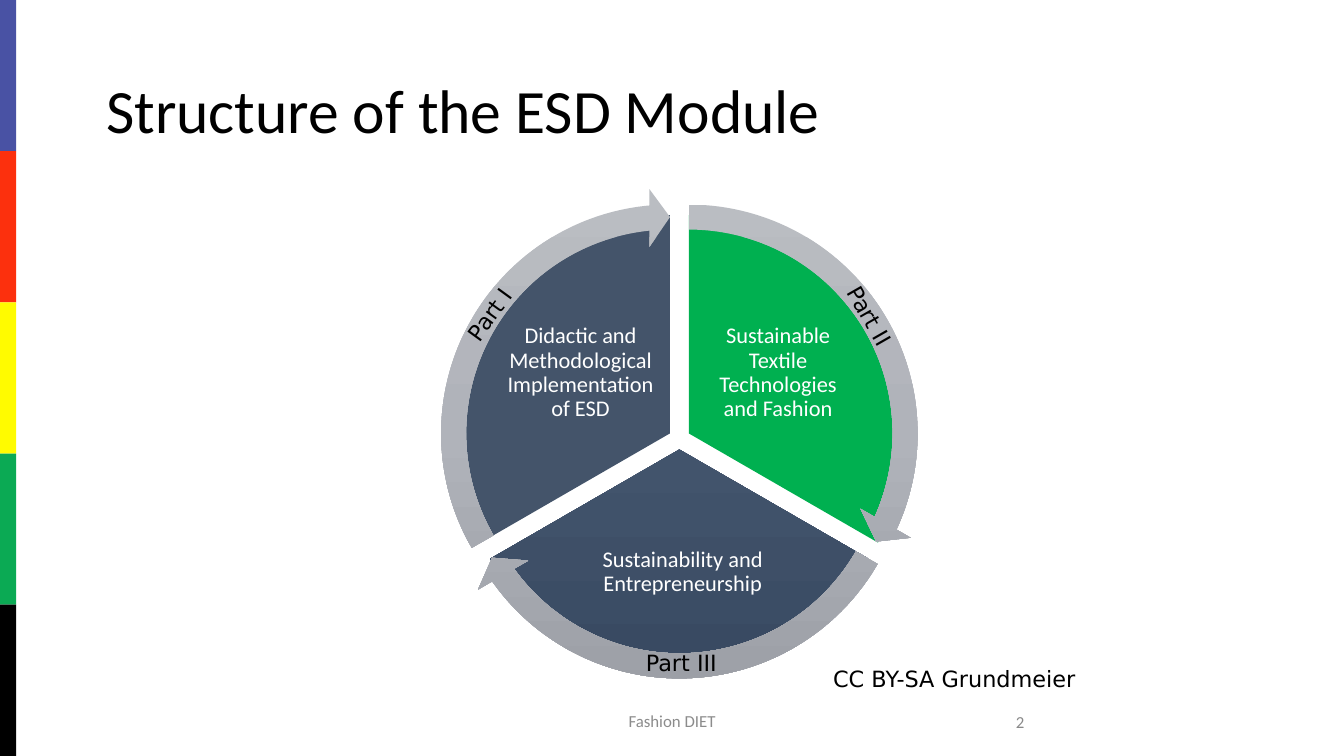
from copy import deepcopy

from pptx import Presentation
from pptx.dml.color import RGBColor
from pptx.enum.shapes import MSO_SHAPE
from pptx.enum.text import MSO_ANCHOR, MSO_AUTO_SIZE, PP_ALIGN
from pptx.oxml.ns import qn
from pptx.util import Inches, Pt

RECT, PIE, ARROW = MSO_SHAPE.RECTANGLE, MSO_SHAPE.PIE, MSO_SHAPE.CIRCULAR_ARROW
LEFT, MID, RIGHT = PP_ALIGN.LEFT, PP_ALIGN.CENTER, PP_ALIGN.RIGHT
TOP, CENTER = MSO_ANCHOR.TOP, MSO_ANCHOR.MIDDLE
GROW = MSO_AUTO_SIZE.SHAPE_TO_FIT_TEXT
SANS, PLAIN = "Calibri", "DejaVu Sans"
WIDE = 10
HIGH = WIDE * 9 / 16
HEX = {
    "blue": "4952A4", "red": "FC300D", "yellow": "FFFB00", "leaf": "0BAA54",
    "black": "000000", "white": "FFFFFF", "foot": "8C8C8C", "page": "898989",
    "green": "00B050", "slate": "44546A",
    "dusk": ["606B7D", "42546C", "394A62"],
    "mist": ["BABDC2", "B0B3BA", "9C9FA6"],
}


def paint(shape, name):
    """Fill a shape with a plain colour or an even downward gradient."""
    tone, fill = HEX[name], shape.fill
    if isinstance(tone, str):
        fill.solid()
        fill.fore_color.rgb = RGBColor.from_string(tone)
        return
    fill.gradient()
    fill.gradient_angle = 270
    stops = shape._element.spPr.find(".//" + qn("a:gsLst"))
    while len(stops) < len(tone):
        stops.append(deepcopy(stops[-1]))
    for i, stop in enumerate(fill.gradient_stops):
        stop.color.rgb = RGBColor.from_string(tone[i])
        stop.position = i / (len(tone) - 1)


def add_part(slide, kind, box, color, adj=()):
    """Add a preset shape without line or shadow."""
    shape = slide.shapes.add_shape(kind, *map(Inches, box))
    shape.shadow.inherit = False
    shape.line.fill.background()
    paint(shape, color)
    for i, value in enumerate(adj):
        shape.adjustments[i] = value


def write(shape, text, size=12, font=SANS, color="black", align=LEFT,
          anchor=CENTER, inset=None, space=None, fit=None):
    """Put one formatted paragraph into a shape."""
    frame = shape.text_frame
    frame.word_wrap = True
    frame.vertical_anchor = anchor
    if fit is not None:
        frame.auto_size = fit
    if inset is not None:
        frame.margin_left = frame.margin_right = Inches(inset)
        frame.margin_top = frame.margin_bottom = Inches(inset)
    para = frame.paragraphs[0]
    para.alignment = align
    para.line_spacing = space
    run = para.add_run()
    run.text = text
    run.font.size, run.font.name = Pt(size), font
    run.font.color.rgb = RGBColor.from_string(HEX[color])


def add_text(slide, text, box, turn=0, **form):
    """Add a text box, turned by some degrees."""
    shape = slide.shapes.add_textbox(*map(Inches, box))
    shape.rotation = turn
    write(shape, text, **form)


def add_title(slide, text, box):
    """Move and fill the title placeholder."""
    title = slide.shapes.title
    title.left, title.top, title.width, title.height = map(Inches, box)
    write(title, text, size=33, space=0.9)


def add_bars(slide, box):
    """Stack equal colour bars in the box."""
    left, top, width, height = box
    names = ["blue", "red", "yellow", "leaf", "black"]
    step = height / len(names)
    for i, name in enumerate(names):
        add_part(slide, RECT, (left, top + i * step, width, step), name)


def add_wheel(slide, box):
    """Draw three slices, their arrows and their part names."""
    left, top, size, _ = box
    rim = 0.2
    slices = [
        ("Sustainable Textile Technologies and Fashion", "green", 0.14, 0,
         (162, 18), (14.725, 161.994), (2.05, 0.89, 1.16, 0.97)),
        ("Sustainability and Entrepreneurship", "dusk", 0.07, 0.12,
         (18, 90), (86.72, 18.005), (1.05, 2.43, 1.74, 0.85)),
        ("Didactic and Methodological Implementation of ESD", "slate", 0, 0,
         (90, 162), (158.73, 90), (0.58, 0.89, 1.16, 0.97)),
    ]
    for text, color, dx, dy, span, _, (x, y, w, h) in slices:
        disc = size - 2 * rim
        spot = (left + dx + rim, top + dy + rim, disc, disc)
        add_part(slide, PIE, spot, color, span)
        add_text(slide, text, (left + x, top + y, w, h), color="white",
                 align=MID, inset=0.02, space=0.9)
    for _, _, dx, dy, _, sweep, _ in slices:
        add_part(slide, ARROW, (left + dx, top + dy, size, size), "mist",
                 (0.051, 3.275, *sweep, 0.059))
    parts = [("Part I", -0.15, 0.79, 306), ("Part II", 2.68, 0.8, 60.2),
             ("Part III", 1.28, 3.38, 0)]
    for text, x, y, turn in parts:
        add_text(slide, text, (left + x, top + y, 1.26, 0.3), turn,
                 font=PLAIN, align=MID, anchor=TOP, fit=GROW)


def add_foot(slide, box):
    """Write the credit, footer and page number."""
    left, top, _, _ = box
    add_text(slide, "Fashion DIET", (left, top + 0.31, 3.38, 0.3), size=9,
             color="foot", align=MID)
    add_text(slide, "2", (left + 2.16, top + 0.32, 2.25, 0.3), size=9,
             color="page", align=RIGHT)
    add_text(slide, "CC BY-SA Grundmeier", (left + 2.79, top, 2.22, 0.3),
             font=PLAIN, anchor=TOP, fit=GROW)


def main():
    """Build and save the slide."""
    deck = Presentation()
    deck.slide_width, deck.slide_height = Inches(WIDE), Inches(HIGH)
    slide = deck.slides.add_slide(deck.slide_layouts[5])
    add_bars(slide, (0, 0, 0.12, HIGH))
    add_title(slide, "Structure of the ESD Module", (0.69, 0.3, 8.62, 1.09))
    add_wheel(slide, (3.16, 1.4, 3.65, 3.65))
    add_foot(slide, (3.31, 4.9, 5.01, 0.62))
    deck.save("out.pptx")


if __name__ == "__main__":
    main()
